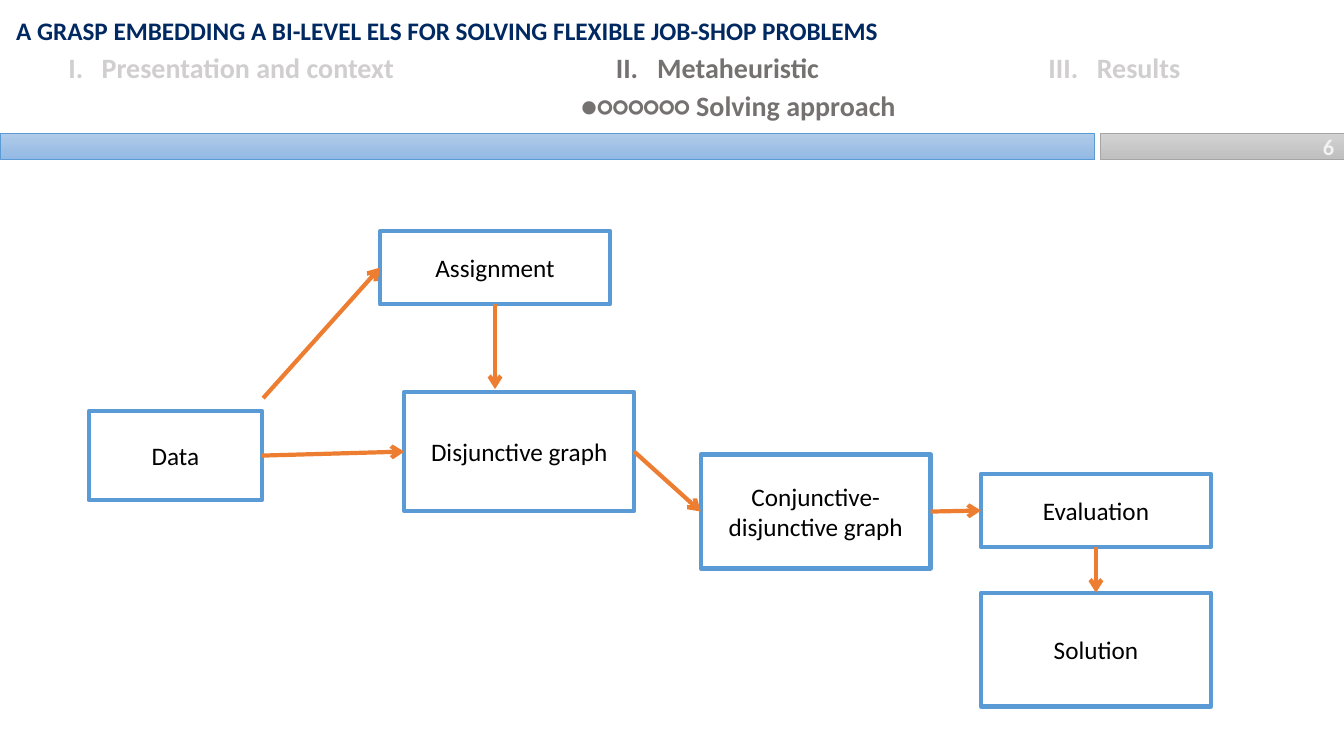
from lxml import etree
from pptx import Presentation
from pptx.dml.color import RGBColor
from pptx.enum.shapes import MSO_CONNECTOR, MSO_SHAPE
from pptx.enum.text import MSO_ANCHOR, MSO_AUTO_SIZE, PP_ALIGN
from pptx.oxml.ns import qn
from pptx.util import Inches, Pt

RECTANGLE, STRAIGHT = MSO_SHAPE.RECTANGLE, MSO_CONNECTOR.STRAIGHT
TOP, MIDDLE = MSO_ANCHOR.TOP, MSO_ANCHOR.MIDDLE
LEFT, CENTER, RIGHT = PP_ALIGN.LEFT, PP_ALIGN.CENTER, PP_ALIGN.RIGHT
FIXED = MSO_AUTO_SIZE.NONE
NORTH, WEST, SOUTH, EAST = range(4)

COLORS = {
    "navy": "002861", "active": "767171", "muted": "D0CECE", "number": "F2F2F2",
    "black": "000000", "white": "FFFFFF", "blue": "5B9BD5", "orange": "ED7D31",
    "gray": "A5A5A5", "blue_top": "B1CBE9", "blue_bottom": "93B9E4",
    "gray_top": "D2D2D2", "gray_bottom": "C0C0C0",
}


class FlowSlide:
    """Draws on one slide with a grid of ten columns and ten rows to the inch."""

    font = "Calibri"
    cell = Inches(0.1)

    def __init__(self, deck):
        self.slide = deck.slides.add_slide(deck.slide_layouts[5])
        self.shapes = self.slide.shapes

    def grid(self, *cells):
        return [round(cell * self.cell) for cell in cells]

    def color(self, name):
        return RGBColor.from_string(COLORS[name])

    def set_text(self, shape, text, size, color, bold=True, align=LEFT, anchor=TOP, wrap=True):
        frame = shape.text_frame
        frame.text = text
        frame.word_wrap = wrap
        frame.auto_size = FIXED
        frame.vertical_anchor = anchor
        frame.margin_left = frame.margin_right = Inches(0.1)
        frame.margin_top = frame.margin_bottom = Inches(0.05)
        paragraph = frame.paragraphs[0]
        paragraph.alignment = align
        paragraph.line_spacing = 1.0
        for run in paragraph.runs:
            run.font.name = self.font
            run.font.size = Pt(size)
            run.font.bold = bold
            run.font.color.rgb = self.color(color)
        return paragraph

    def title(self, place, text):
        heading = self.shapes.title
        heading.left, heading.top, heading.width, heading.height = self.grid(*place)
        self.set_text(heading, text, 18, "navy")

    def label(self, place, text, color, tab=None):
        box = self.shapes.add_textbox(*self.grid(*place))
        paragraph = self.set_text(box, text, 20, color, wrap=False)
        if tab:
            properties = paragraph._p.get_or_add_pPr()
            stops = etree.SubElement(properties, qn("a:tabLst"))
            etree.SubElement(stops, qn("a:tab"), pos=str(self.grid(tab)[0]), algn="l")

    def rectangle(self, place, line, width):
        shape = self.shapes.add_shape(RECTANGLE, *self.grid(*place))
        shape.shadow.inherit = False
        shape.line.color.rgb = self.color(line)
        shape.line.width = Pt(width)
        return shape

    def bar(self, place, tone):
        strip = self.rectangle(place, tone, 0.5)
        strip.fill.gradient()
        strip.fill.gradient_angle = 270
        for stop, end in zip(strip.fill.gradient_stops, ("top", "bottom")):
            stop.color.rgb = self.color(f"{tone}_{end}")
        return strip

    def step(self, place, text):
        box = self.rectangle(place, "blue", 3)
        box.fill.solid()
        box.fill.fore_color.rgb = self.color("white")
        self.set_text(box, text, 18, "black", bold=False, align=CENTER, anchor=MIDDLE)
        return box

    def arrow(self, source, target):
        """Each end is a (step, side) pair or a (column, row) point."""
        ends = [end if isinstance(end[0], (int, float)) else (0, 0) for end in (source, target)]
        link = self.shapes.add_connector(STRAIGHT, *self.grid(*ends[0], *ends[1]))
        if not isinstance(source[0], (int, float)):
            link.begin_connect(*source)
        if not isinstance(target[0], (int, float)):
            link.end_connect(*target)
        link.line.color.rgb = self.color("orange")
        link.line.width = Pt(3)
        etree.SubElement(link.line._get_or_add_ln(), qn("a:tailEnd"), type="arrow")
        etree.SubElement(link._element.spPr, qn("a:effectLst"))


def main():
    deck = Presentation()
    deck.slide_width, deck.slide_height = Inches(13.33), Inches(7.5)
    page = FlowSlide(deck)

    page.title((0.6, 1, 107.8, 4),
               "A GRASP EMBEDDING A BI-LEVEL ELS FOR SOLVING FLEXIBLE JOB-SHOP PROBLEMS")
    number = page.bar((109.1, 13.2, 24.2, 2.6), "gray")
    page.set_text(number, "6", 16, "number", align=RIGHT, anchor=MIDDLE)
    page.bar((0, 13.2, 108.5, 2.6), "blue")

    sections = [
        (5.8, 34.7, "I.\tPresentation and context", "muted", 3.3),
        (60.1, 22.4, "II.\tMetaheuristic", "active", 4.1),
        (103, 15.3, "III.\tResults", "muted", 4.8),
    ]
    for column, width, section, color, tab in sections:
        page.label((column, 4.5, width, 4.4), section, color, tab)
    page.label((56.6, 8.3, 33.6, 4.4), "●○○○○○○ Solving approach", "active")

    data = page.step((8.8, 40.8, 17.2, 8.8), "Data")
    disjunctive = page.step((40.1, 38.9, 22.8, 11.8), "Disjunctive graph")
    conjunctive = page.step((69.5, 45.1, 22.8, 11.3), "Conjunctive-disjunctive graph")
    evaluation = page.step((97.3, 47, 22.8, 7.3), "Evaluation")
    solution = page.step((97.3, 58.8, 22.8, 11.3), "Solution")
    assignment = page.step((37.7, 22.9, 22.8, 7.3), "Assignment")

    page.arrow((data, EAST), (disjunctive, WEST))
    page.arrow((disjunctive, EAST), (conjunctive, WEST))
    page.arrow((conjunctive, EAST), (evaluation, WEST))
    page.arrow((evaluation, SOUTH), (solution, NORTH))
    page.arrow((assignment, SOUTH), (49.1, 38.6))
    page.arrow((26.1, 39.5), (assignment, WEST))

    deck.save("out.pptx")


if __name__ == "__main__":
    main()
